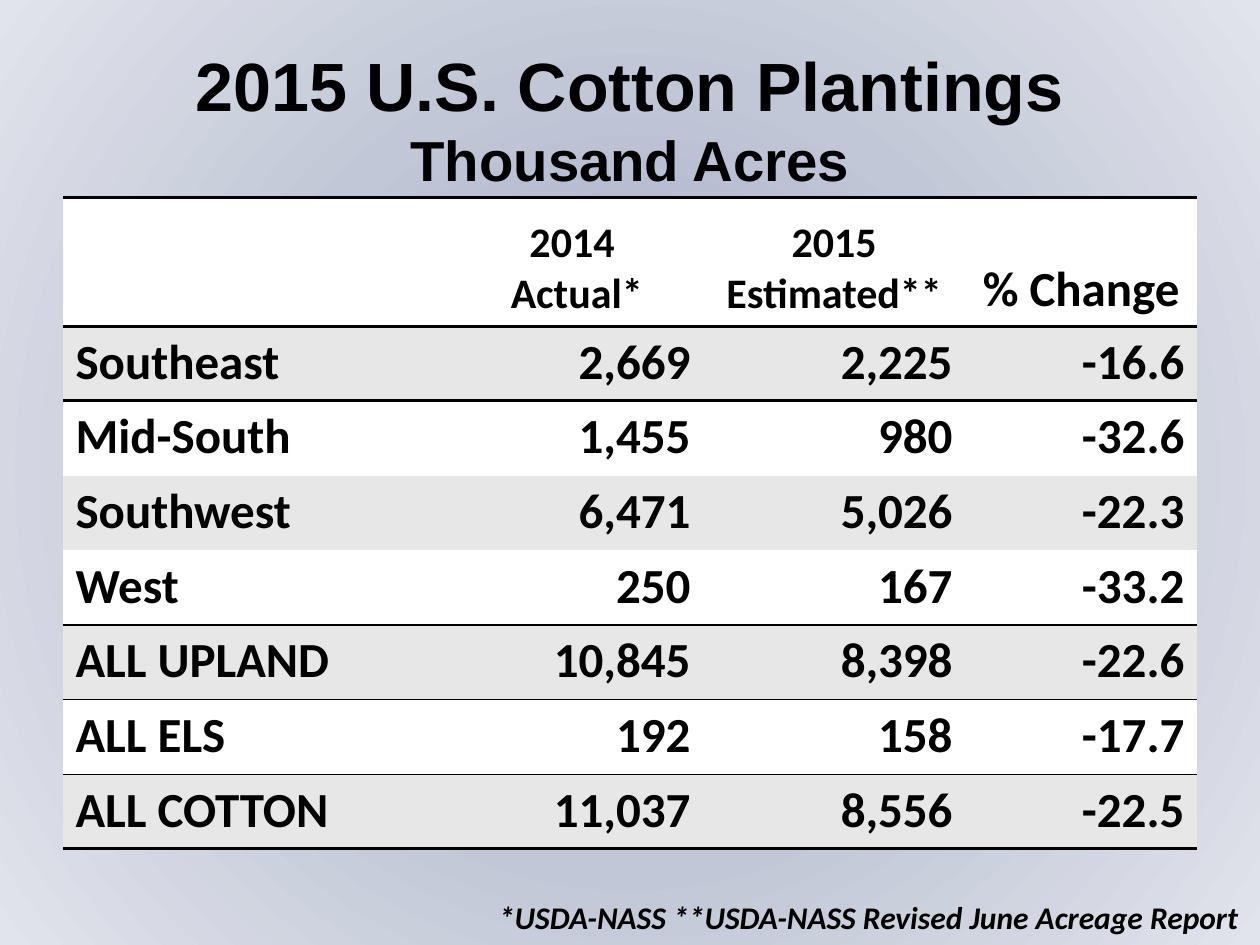
from pptx import Presentation
from pptx.dml.color import RGBColor as RGB
from pptx.enum.text import MSO_ANCHOR as Anchor, PP_ALIGN as Align
from pptx.oxml import parse_xml
from pptx.oxml.ns import nsdecls, qn
from pptx.util import Inches, Pt

BLACK = RGB(0x00, 0x00, 0x00)
WHITE = RGB(0xFF, 0xFF, 0xFF)
GRAY = RGB(0xE7, 0xE7, 0xE7)
DEEP = RGB(0x98, 0xA3, 0xC1)
MIST = RGB(0xC2, 0xC7, 0xD7)
PALE = RGB(0xE1, 0xE4, 0xEB)
PLAIN = "{2D5ABB26-0587-4C30-8999-92F81FD0307C}"  # no style, no grid

HEAD = ["", "2014\n Actual*", "2015 Estimated**", "% Change"]
ROWS = [
    ["Southeast", "2,669", "2,225", "-16.6"],
    ["Mid-South", "1,455", "980", "-32.6"],
    ["Southwest", "6,471", "5,026", "-22.3"],
    ["West", "250", "167", "-33.2"],
    ["ALL UPLAND", "10,845", "8,398", "-22.6"],
    ["ALL ELS", "192", "158", "-17.7"],
    ["ALL COTTON", "11,037", "8,556", "-22.5"],
]
RULES = {0: 2, 4: 1, 6: 1, 7: 2}  # row number: line width below it


class Deck:
    """Holds the style and the current slide; places are shares of its size."""

    def __init__(self, wide, high):
        self.prs = Presentation()
        self.prs.slide_width = self.wide = Inches(wide)
        self.prs.slide_height = self.high = Inches(high)
        self.slide = self.prs.slides.add_slide(self.prs.slide_layouts[6])
        self.base = {"name": "Calibri", "size": Pt(28), "bold": True}

    def box(self, x, y, w, h):
        return [int(x * self.wide), int(y * self.high),
                int(w * self.wide), int(h * self.high)]

    def back(self, *tones):
        """Round gradient from the middle outwards."""
        self.slide.background.fill.gradient()
        old = self.slide.element.find(".//" + qn("a:gradFill"))
        last = len(tones) - 1
        stops = "".join(
            f'<a:gs pos="{100000 * i // last}"><a:srgbClr val="{tone}"/></a:gs>'
            for i, tone in enumerate(tones))
        old.getparent().replace(old, parse_xml(
            f'<a:gradFill {nsdecls("a")} rotWithShape="1"><a:gsLst>{stops}</a:gsLst>'
            '<a:path path="circle"><a:fillToRect l="50000" t="50000" r="50000" '
            'b="50000"/></a:path></a:gradFill>'))

    def lines(self, frame, texts, align, *looks):
        """One paragraph per text; the last look serves any further ones."""
        for i, words in enumerate(texts):
            para = frame.add_paragraph() if i else frame.paragraphs[0]
            para.alignment = align
            run = para.add_run()
            run.text = words
            run.font.color.rgb = BLACK
            look = looks[min(i, len(looks) - 1)]
            for key, val in (self.base | look).items():
                setattr(run.font, key, val)

    def text(self, place, texts, align, *looks, **form):
        frame = self.slide.shapes.add_textbox(*self.box(*place)).text_frame
        for key, val in ({"word_wrap": True} | form).items():
            setattr(frame, key, val)
        self.lines(frame, texts, align, *looks)

    def rule(self, cell, side, width):
        cell._tc.get_or_add_tcPr().append(parse_xml(
            f'<a:ln{side} {nsdecls("a")} w="{Pt(width)}"><a:solidFill>'
            f'<a:srgbClr val="{BLACK}"/></a:solidFill></a:ln{side}>'))

    def table(self, place, rows, cols, tall):
        size = len(rows), len(cols)
        frame = self.slide.shapes.add_table(*size, *self.box(*place))
        grid = frame.table
        grid._tbl.tblPr.find(qn("a:tableStyleId")).text = PLAIN
        for col, part in zip(grid.columns, cols):
            col.width = int(part * self.wide)
        # The heading takes its own height; the rest share what is left
        rest = (place[3] - tall) / (len(rows) - 1)
        for r, row in enumerate(rows):
            grid.rows[r].height = int((rest if r else tall) * self.high)
            for c, words in enumerate(row):
                self.cell(grid.cell(r, c), r, c, words)

    def cell(self, cell, r, c, words):
        # Borders come before the fill
        above = RULES.get(r - 1, 0 if r else 2)
        for side, width in (("T", above), ("B", RULES.get(r))):
            if width:
                self.rule(cell, side, width)
        cell.fill.solid()
        cell.fill.fore_color.rgb = GRAY if r % 2 else WHITE
        cell.vertical_anchor = Anchor.TOP if r else Anchor.BOTTOM
        align = Align.CENTER if r == 0 else Align.RIGHT if c else Align.LEFT
        look = {"size": Pt(24)} if r == 0 and c < 3 else {}
        if words:
            self.lines(cell.text_frame, words.split("\n"), align, look)


def main():
    deck = Deck(10, 7.5)
    deck.back(DEEP, MIST, PALE)

    # Title
    deck.text((0.05, 0.04, 0.9, 0.17),
              ["2015 U.S. Cotton Plantings", "Thousand Acres"], Align.CENTER,
              {"name": "Arial", "size": Pt(39)},
              {"name": "Arial", "size": Pt(32.2)},
              vertical_anchor=Anchor.MIDDLE)

    # Acreage table
    deck.table((0.05, 1.57 / 7.5, 0.9, 5.17 / 7.5), [HEAD] + ROWS,
               [0.3, 0.208, 0.208, 0.184], 1.02 / 7.5)

    # Sources
    deck.text((0.34, 7.08 / 7.5, 0.66, 0.4 / 7.5),
              ["*USDA-NASS **USDA-NASS Revised June Acreage Report"],
              Align.RIGHT, {"size": Pt(18), "italic": True},
              margin_right=Inches(0.17))

    deck.prs.save("out.pptx")


if __name__ == "__main__":
    main()
